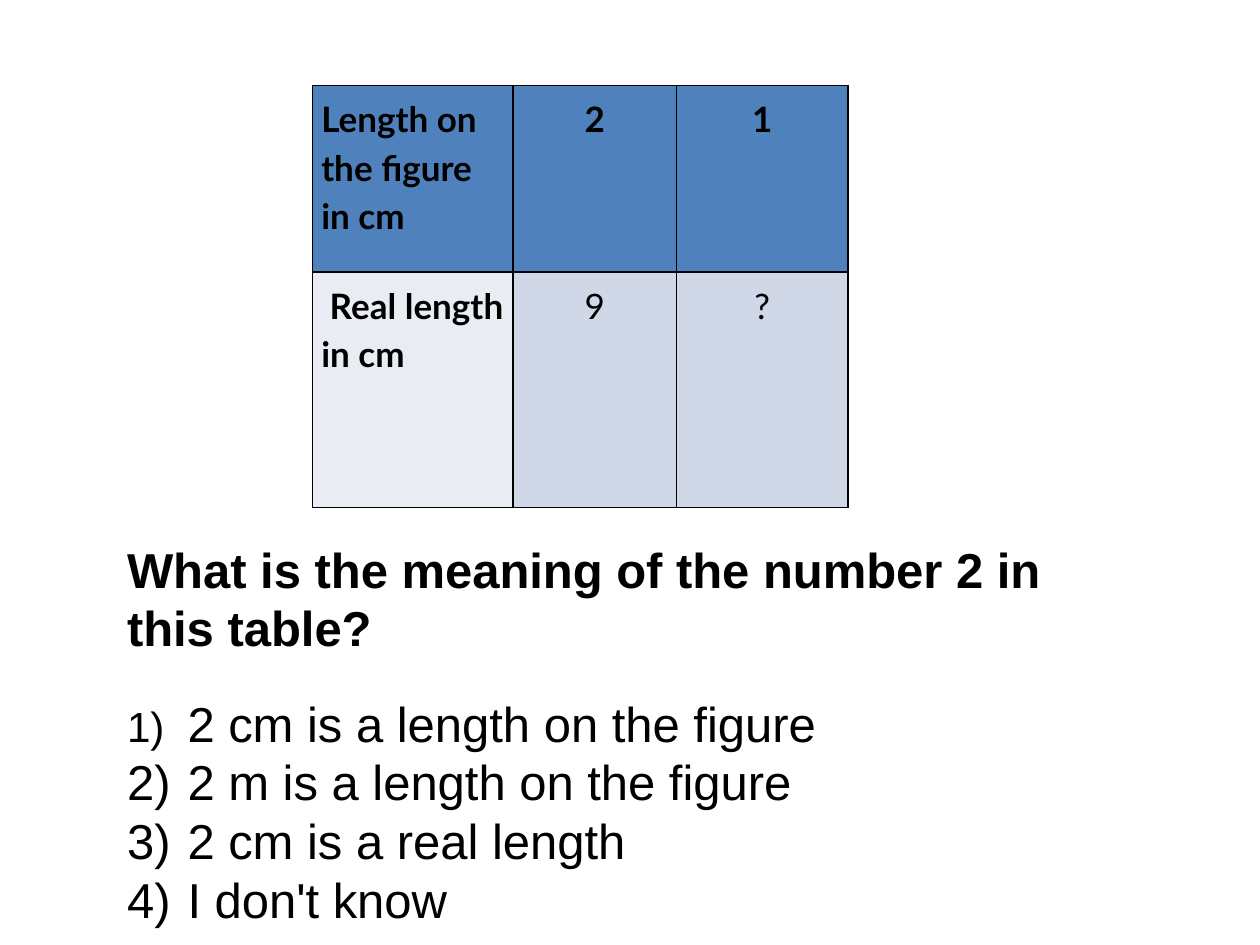
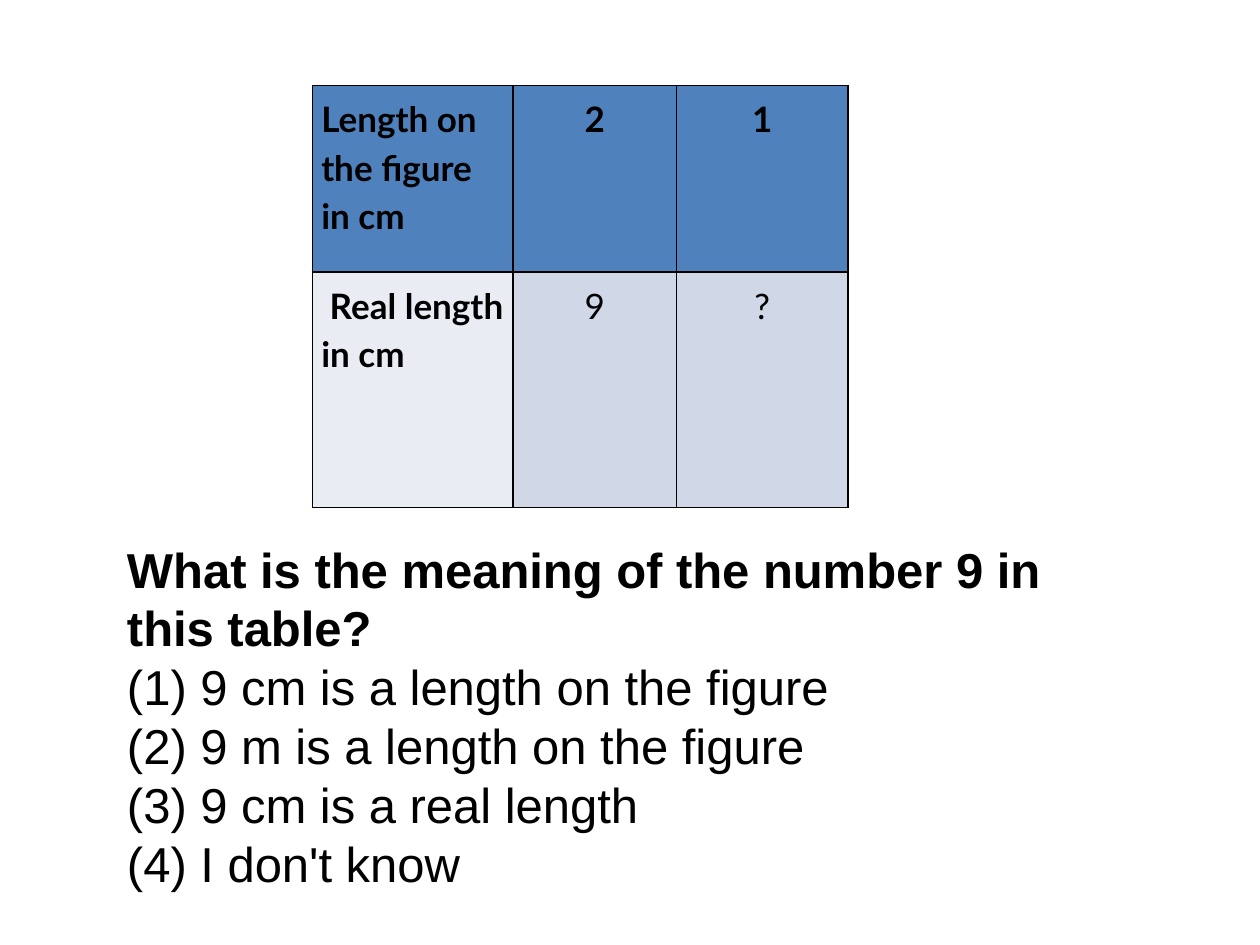
from dataclasses import dataclass
from itertools import product

import pptx
import pptx.dml.color
import pptx.enum.text
import pptx.oxml
import pptx.oxml.ns
import pptx.util

WIDTH, HEIGHT = pptx.util.Inches(10), pptx.util.Inches(7.5)
COLUMNS, ROWS = 100, 75

BLACK, BLUE, PALE, GREY_BLUE = "000000", "4F81BD", "E9ECF3", "D0D8E7"
TABLE_FONT, TEXT_FONT = "Lato", "Arial"
TABLE_SIZE, TEXT_SIZE = 20, 28

TABLE_LEFT, TABLE_TOP = 24.8, 6.8
COLUMN_WIDTHS = (15.9, 13, 13.6)
ROW_HEIGHTS = (14.8, 18.7)
BORDER = pptx.util.Pt(0.96)
NUMBER_INDENT = 4.8


@dataclass(frozen=True)
class Cell:
    text: str
    fill: str
    bold: bool = True
    centred: bool = True


@dataclass(frozen=True)
class Question:
    number: int
    width: float
    height: float
    auto_numbered: bool
    gap: float = 0
    first_number_percent: int = 100


LENGTHS = (
    (Cell("Length on the figure in cm", BLUE, centred=False),
     Cell("2", BLUE), Cell("1", BLUE)),
    (Cell(" Real length in cm", PALE, centred=False),
     Cell("9", GREY_BLUE, bold=False), Cell("?", GREY_BLUE, bold=False)),
)
QUESTIONS = (
    Question(2, 79.5, 33, auto_numbered=True, gap=20.7, first_number_percent=86),
    Question(9, 78.7, 29, auto_numbered=False),
)


def across(columns: float) -> int:
    return round(WIDTH * columns / COLUMNS)


def down(rows: float) -> int:
    return round(HEIGHT * rows / ROWS)


def rgb(colour: str) -> pptx.dml.color.RGBColor:
    return pptx.dml.color.RGBColor.from_string(colour)


def add_run(p, text: str, font: str, size: float, bold: bool) -> None:
    r = p.add_run()
    r.text = text
    r.font.name, r.font.size, r.font.bold = font, pptx.util.Pt(size), bold
    r.font.color.rgb = rgb(BLACK)


def outline(cell) -> None:
    tc_pr = cell._tc.get_or_add_tcPr()
    for side in "LRTB":
        tc_pr.append(pptx.oxml.parse_xml(
            f'<a:ln{side} {pptx.oxml.ns.nsdecls("a")} w="{BORDER}">'
            f'<a:solidFill><a:srgbClr val="{BLACK}"/></a:solidFill></a:ln{side}>'))


def number(p, percent: int) -> None:
    """Give the paragraph an automatic number and a hanging indent."""
    p_pr = p._p.get_or_add_pPr()
    indent = across(NUMBER_INDENT)
    p_pr.set("marL", str(indent))
    p_pr.set("indent", str(-indent))
    for tag in (f'buSzPct {{}} val="{percent * 1000}"',
                'buAutoNum {} type="arabicParenR"'):
        p_pr.append(pptx.oxml.parse_xml(
            f'<a:{tag.format(pptx.oxml.ns.nsdecls("a"))}/>'))


def add_lengths(s) -> None:
    table = s.shapes.add_table(
        len(ROW_HEIGHTS), len(COLUMN_WIDTHS), across(TABLE_LEFT), down(TABLE_TOP),
        across(sum(COLUMN_WIDTHS)), down(sum(ROW_HEIGHTS))).table
    for column, width in zip(table.columns, COLUMN_WIDTHS):
        column.width = across(width)
    for row, height in zip(table.rows, ROW_HEIGHTS):
        row.height = down(height)
    for i, j in product(range(len(ROW_HEIGHTS)), range(len(COLUMN_WIDTHS))):
        content, cell = LENGTHS[i][j], table.cell(i, j)
        outline(cell)
        cell.fill.solid()
        cell.fill.fore_color.rgb = rgb(content.fill)
        cell.margin_left = cell.margin_right = across(0.7)
        cell.margin_top = cell.margin_bottom = down(0.5)
        p = cell.text_frame.paragraphs[0]
        p.line_spacing = 1.15
        if content.centred:
            p.alignment = pptx.enum.text.PP_ALIGN.CENTER
        add_run(p, content.text, TABLE_FONT, TABLE_SIZE, content.bold)


def add_question(s, question: Question) -> None:
    n = question.number
    tf = s.shapes.add_textbox(across(9.1), down(42.3), across(question.width),
                              down(question.height)).text_frame
    tf.word_wrap = True
    add_run(tf.paragraphs[0], f"What is the meaning of the number {n} in this table?",
            TEXT_FONT, TEXT_SIZE, True)
    answers = (f"{n} cm is a length on the figure", f"{n} m is a length on the figure",
               f"{n} cm is a real length", "I don't know")
    for i, answer in enumerate(answers, 1):
        p = tf.add_paragraph()
        if i == 1:
            p.space_before = pptx.util.Pt(question.gap)
        if question.auto_numbered:
            number(p, question.first_number_percent if i == 1 else 100)
        else:
            answer = f"({i}) {answer}"
        add_run(p, answer, TEXT_FONT, TEXT_SIZE, False)


def main() -> None:
    prs = pptx.Presentation()
    prs.slide_width, prs.slide_height = WIDTH, HEIGHT
    blank = prs.slide_layouts.get_by_name("Blank")
    for question in QUESTIONS:
        s = prs.slides.add_slide(blank)
        add_lengths(s)
        add_question(s, question)
    prs.save("out.pptx")


if __name__ == "__main__":
    main()
